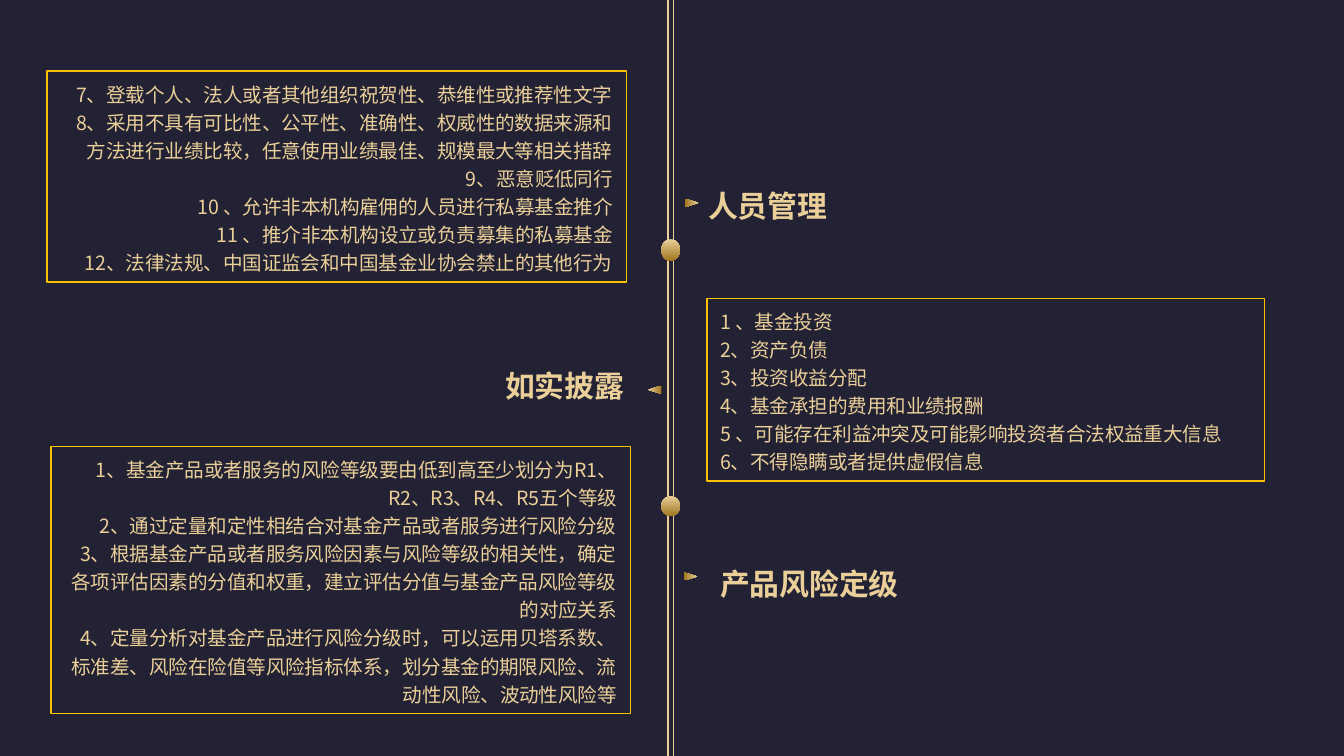
from lxml import etree
from pptx import Presentation
from pptx.dml.color import RGBColor
from pptx.enum.shapes import MSO_CONNECTOR, MSO_SHAPE
from pptx.enum.text import MSO_ANCHOR, MSO_AUTO_SIZE, PP_ALIGN
from pptx.oxml.ns import qn
from pptx.util import Inches, Pt

FONT = "Noto Sans CJK SC"
BACKGROUND, GOLD, BRONZE, BORDER = "232234", "EACF99", "A07621", "FFC000"

HEADINGS = [
    ("人员管理", 5.17, 1.35, 1.37),
    ("如实披露", 3.66, 2.69, 1.37),
    ("产品风险定级", 5.26, 4.16, 2.42),
]
POINTERS = [(5.12, 1.46, 90), (4.84, 2.85, 270), (5.11, 4.24, 90)]
RAIL_SPANS = [(-0.12, 2.17), (2.14, 3.85), (3.85, 5.63)]
BEADS = [(1.78, 0.16), (3.69, 0.15)]

PROMOTION_BANS = [
    "7、登载个人、法人或者其他组织祝贺性、恭维性或推荐性文字",
    "8、采用不具有可比性、公平性、准确性、权威性的数据来源和方法进行业绩比较，任意使用业绩最佳、规模最大等相关措辞",
    "9、恶意贬低同行",
    "10 、允许非本机构雇佣的人员进行私募基金推介",
    "11 、推介非本机构设立或负责募集的私募基金",
    " 12、法律法规、中国证监会和中国基金业协会禁止的其他行为",
]
DISCLOSURES = [
    "1 、基金投资",
    "2、资产负债",
    "3、投资收益分配",
    "4、基金承担的费用和业绩报酬",
    "5 、可能存在利益冲突及可能影响投资者合法权益重大信息",
    "6、不得隐瞒或者提供虚假信息",
]
RISK_GRADING = [
    "1、基金产品或者服务的风险等级要由低到高至少划分为R1、R2、R3、R4、R5五个等级",
    "2、通过定量和定性相结合对基金产品或者服务进行风险分级",
    "3、根据基金产品或者服务风险因素与风险等级的相关性，确定各项评估因素的分值和权重，建立评估分值与基金产品风险等级的对应关系",
    "4、定量分析对基金产品进行风险分级时，可以运用贝塔系数、标准差、风险在险值等风险指标体系，划分基金的期限风险、流动性风险、波动性风险等",
]


def rgb(color):
    return RGBColor.from_string(color)


def gild(fill):
    fill.gradient()
    fill.gradient_angle = 270
    for stop, color in zip(fill.gradient_stops, (GOLD, BRONZE)):
        stop.color.rgb = rgb(color)


def format_run(r, size, bold=False):
    r.font.size = Pt(size)
    r.font.bold = bold
    r.font.name = FONT
    gild(r.font.fill)
    ea = etree.SubElement(r.font._element, qn("a:ea"))
    ea.set("typeface", FONT)


def add_rail(s, x, top, bottom):
    line = s.shapes.add_connector(
        MSO_CONNECTOR.STRAIGHT, Inches(x), Inches(top), Inches(x), Inches(bottom))
    line.line.color.rgb = rgb(GOLD)
    line.line.width = Pt(0.75)
    etree.SubElement(line._element.spPr, qn("a:effectLst"))


def add_shape(s, kind, x, y, w, h):
    sp = s.shapes.add_shape(kind, Inches(x), Inches(y), Inches(w), Inches(h))
    sp.shadow.inherit = False
    return sp


def add_ornament(s, kind, x, y, w, h, rotation=0):
    sp = add_shape(s, kind, x, y, w, h)
    gild(sp.fill)
    sp.line.fill.background()
    sp.rotation = rotation


def add_heading(s, text, x, y, w):
    sp = s.shapes.add_textbox(Inches(x), Inches(y), Inches(w), Inches(0.37))
    tf = sp.text_frame
    tf.word_wrap = True
    tf.auto_size = MSO_AUTO_SIZE.SHAPE_TO_FIT_TEXT
    tf.text = text
    format_run(tf.paragraphs[0].runs[0], 16, bold=True)


def add_panel(s, items, x, y, w, h, align):
    sp = add_shape(s, MSO_SHAPE.RECTANGLE, x, y, w, h)
    sp.fill.background()
    sp.line.color.rgb = rgb(BORDER)
    sp.line.width = Pt(0.75)
    tf = sp.text_frame
    tf.word_wrap = True
    tf.auto_size = MSO_AUTO_SIZE.SHAPE_TO_FIT_TEXT
    tf.vertical_anchor = MSO_ANCHOR.TOP
    tf.text = "\n".join(items)
    for p in tf.paragraphs:
        p.alignment = align
        p.line_spacing = 1.2
        format_run(p.runs[0], 10.5)


def main():
    prs = Presentation()
    prs.slide_width = Inches(10)
    prs.slide_height = Inches(10) * 9 // 16
    s = prs.slides.add_slide(prs.slide_layouts[6])
    s.background.fill.solid()
    s.background.fill.fore_color.rgb = rgb(BACKGROUND)

    for x, y, rotation in POINTERS:
        add_ornament(s, MSO_SHAPE.ISOSCELES_TRIANGLE, x, y, 0.06, 0.1, rotation)
    for top, bottom in RAIL_SPANS:
        for x in (5.01, 4.97):
            add_rail(s, x, top, bottom)
    for y, h in BEADS:
        add_ornament(s, MSO_SHAPE.OVAL, 4.92, y, 0.14, h)
    for heading in HEADINGS:
        add_heading(s, *heading)

    add_panel(s, DISCLOSURES, 5.26, 2.22, 4.15, 1.36, PP_ALIGN.LEFT)
    add_panel(s, PROMOTION_BANS, 0.35, 0.53, 4.31, 1.57, PP_ALIGN.RIGHT)
    add_panel(s, RISK_GRADING, 0.38, 3.32, 4.31, 1.99, PP_ALIGN.RIGHT)

    prs.save("out.pptx")


if __name__ == "__main__":
    main()
